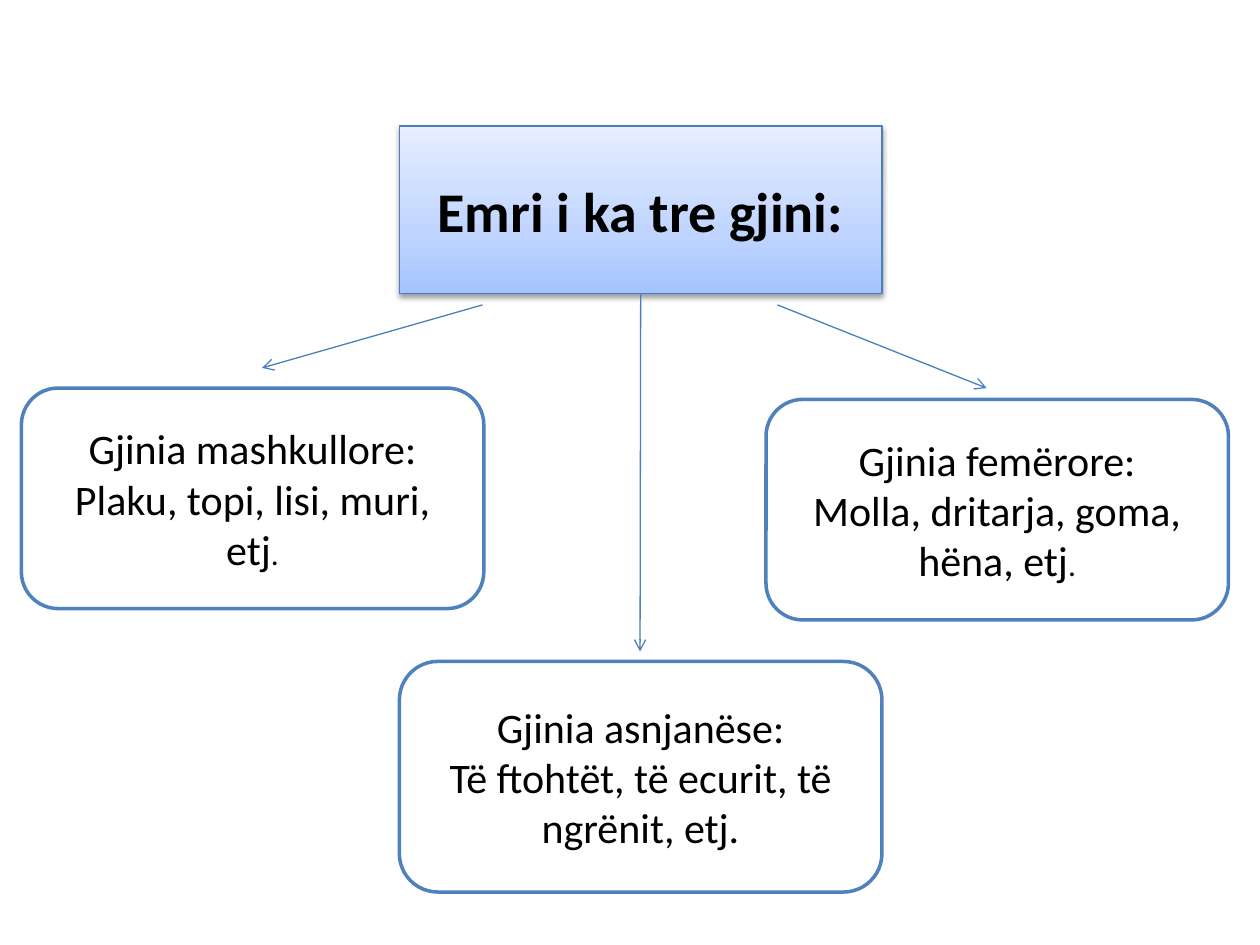
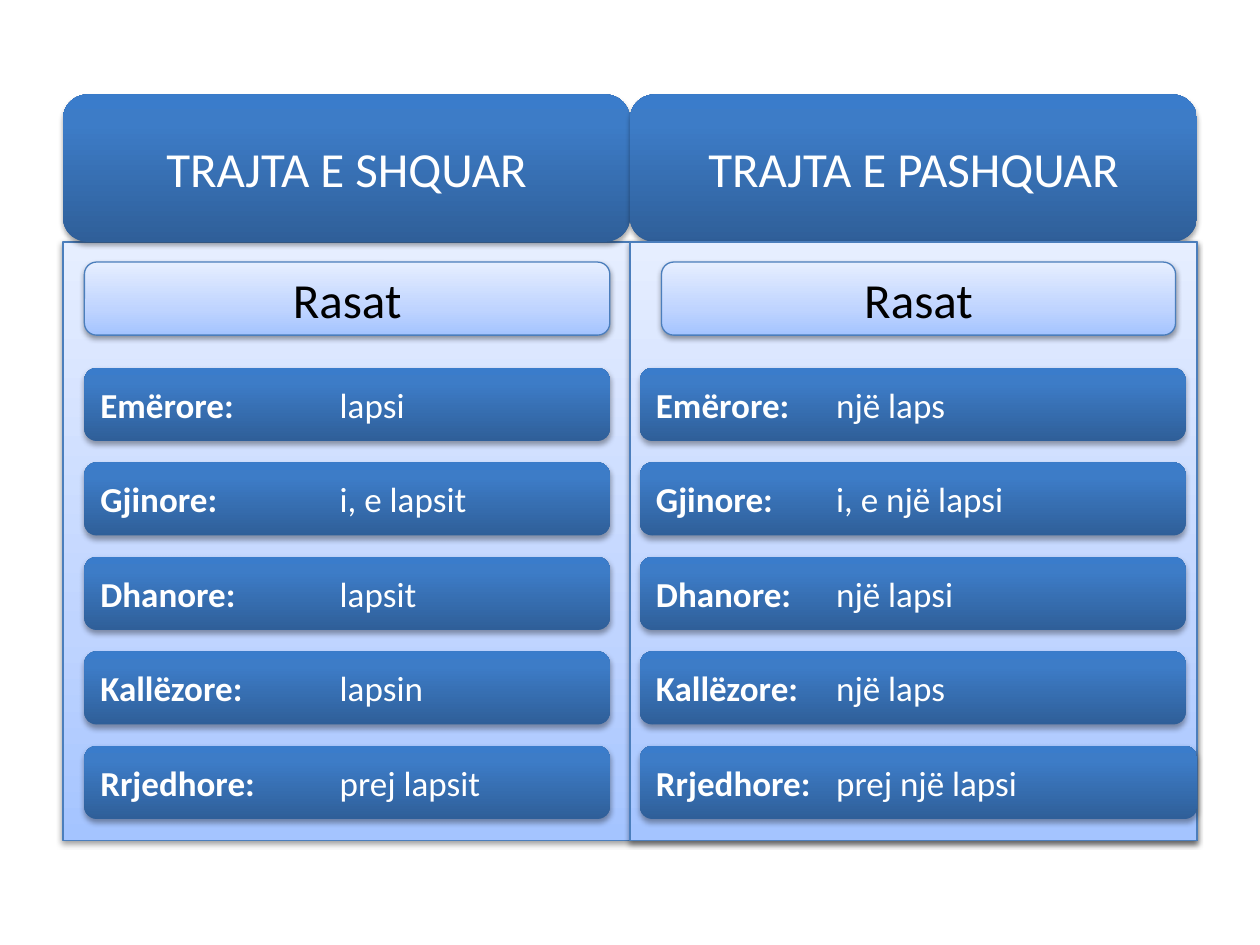
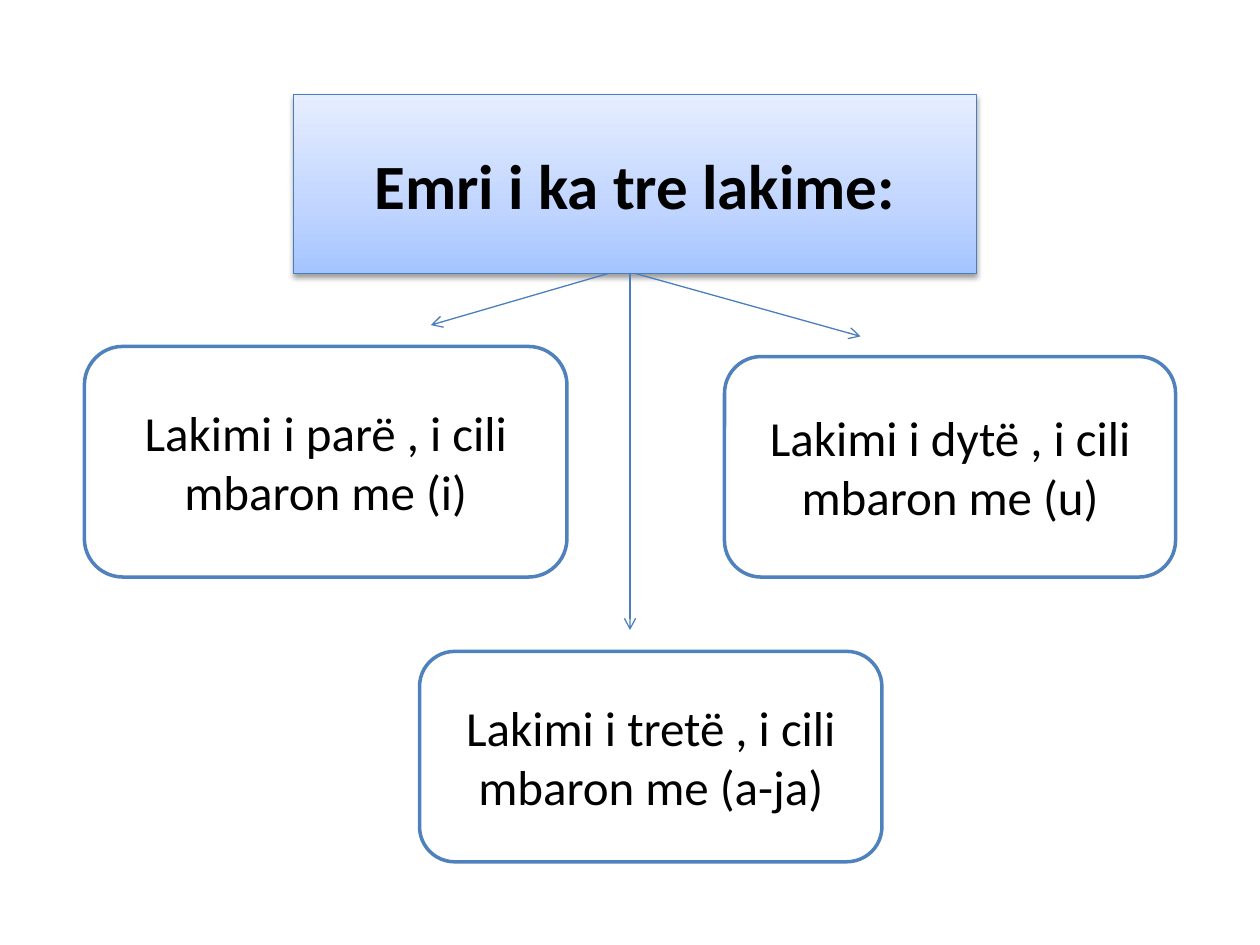
import pptx
import pptx.dml.color
import pptx.enum.shapes
import pptx.enum.text
import pptx.oxml.ns
import pptx.util
from lxml import etree

Inches = pptx.util.Inches
Pt = pptx.util.Pt
qn = pptx.oxml.ns.qn
SHAPES = pptx.enum.shapes.MSO_SHAPE
ALIGN = pptx.enum.text.PP_ALIGN

FONT = "Calibri"
BLACK = "000000"
WHITE = "FFFFFF"
EDGE = "4B7EBC"
TITLE_LAYOUT, BLANK_LAYOUT = 5, 6

PALE = {"stops": [(0, "A4C4FF"), (35, "BFD4FF"), (100, "E6EEFF")],
        "line": (EDGE, 0.75), "shadow": (38, 1.6)}
DEEP = {"stops": [(0, "2F5F99"), (80, "3D7CC7"), (100, "3A7CCB")],
        "shadow": (35, 1.8)}
OUTLINED = {"solid": WHITE, "line": ("4F81BD", 2)}

ROW_TOP, ROW_STEP, ROW_HEIGHT = 2.92, 0.75, 0.58
CASES = ["Emërore:", "Gjinore:", "Dhanore:", "Kallëzore:", "Rrjedhore:"]


def color(value):
    return pptx.dml.color.RGBColor.from_string(value)


def add_color_element(parent, value):
    return etree.SubElement(parent, qn("a:srgbClr"), val=value)


def fill_gradient(shape, stops):
    """Fill with (percent, colour) stops running from bottom to top."""
    shape.fill.gradient()
    shape.fill.gradient_angle = 90
    stop_list = shape._element.spPr.find(qn("a:gradFill")).find(qn("a:gsLst"))
    for old_stop in list(stop_list):
        stop_list.remove(old_stop)
    for percent, value in stops:
        stop = etree.SubElement(stop_list, qn("a:gs"), pos=str(percent * 1000))
        add_color_element(stop, value)


def add_shadow(shape, opacity, distance):
    effects = shape._element.spPr.find(qn("a:effectLst"))
    shadow = etree.SubElement(
        effects, qn("a:outerShdw"), blurRad=str(Pt(3.1)), dist=str(Pt(distance)),
        dir="5400000", rotWithShape="0")
    shade = add_color_element(shadow, BLACK)
    etree.SubElement(shade, qn("a:alpha"), val=str(opacity * 1000))


def apply_look(shape, look):
    if "stops" in look:
        fill_gradient(shape, look["stops"])
    else:
        shape.fill.solid()
        shape.fill.fore_color.rgb = color(look["solid"])
    if "line" in look:
        line_color, width = look["line"]
        shape.line.color.rgb = color(line_color)
        shape.line.width = Pt(width)
    else:
        shape.line.fill.background()
    shape.shadow.inherit = False
    if "shadow" in look:
        add_shadow(shape, *look["shadow"])


def write_text(shape, paragraphs, size, text_color=BLACK, bold=False,
               align=ALIGN.CENTER):
    """Write paragraphs, each a list of (text, format changes) runs."""
    frame = shape.text_frame
    frame.word_wrap = True
    frame.vertical_anchor = pptx.enum.text.MSO_ANCHOR.MIDDLE
    for index, runs in enumerate(paragraphs):
        paragraph = frame.add_paragraph() if index else frame.paragraphs[0]
        paragraph.alignment = align
        for text, changes in runs:
            run = paragraph.add_run()
            run.text = text
            settings = {"name": FONT, "size": Pt(size), "bold": bold, **changes}
            for name, value in settings.items():
                setattr(run.font, name, value)
            run.font.color.rgb = color(text_color)


def add_box(slide, kind, bounds, look):
    shape = slide.shapes.add_shape(kind, *map(Inches, bounds))
    apply_look(shape, look)
    return shape


def add_title(slide, text, bounds, size):
    title = slide.shapes.title
    for name, value in zip(("left", "top", "width", "height"), bounds):
        setattr(title, name, Inches(value))
    apply_look(title, PALE)
    write_text(title, [[(text, {})]], size, bold=True)
    return title


def add_arrow(slide, start, end, source=None):
    """Draw an arrow, joined to the bottom of source when one is given."""
    arrow = slide.shapes.add_connector(
        pptx.enum.shapes.MSO_CONNECTOR.STRAIGHT, *map(Inches, start + end))
    if source is not None:
        arrow.begin_connect(source, 2)
    arrow.line.color.rgb = color(EDGE)
    arrow.line.width = Pt(0.75)
    etree.SubElement(arrow.line._get_or_add_ln(), qn("a:tailEnd"), type="arrow")
    etree.SubElement(arrow._element.spPr, qn("a:effectLst"))


def add_branch_slide(presentation, title, branches, size, arrows):
    """Build a title box with arrows to outlined boxes below it."""
    slide = presentation.slides.add_slide(presentation.slide_layouts[TITLE_LAYOUT])
    title_box = add_title(slide, *title)
    for bounds, paragraphs in branches:
        box = add_box(slide, SHAPES.ROUNDED_RECTANGLE, bounds, OUTLINED)
        write_text(box, paragraphs, size)
    for start, end, joined in arrows:
        add_arrow(slide, start, end, title_box if joined else None)


def add_case_row(slide, bounds, case, form, tab):
    row = add_box(slide, SHAPES.ROUNDED_RECTANGLE, bounds, DEEP)
    write_text(row, [[(case + "\t", {"bold": True}), (form, {})]], 20, WHITE,
               align=ALIGN.LEFT)
    properties = row.text_frame.paragraphs[0]._p.get_or_add_pPr()
    tabs = etree.SubElement(properties, qn("a:tabLst"))
    etree.SubElement(tabs, qn("a:tab"), pos=str(Inches(tab)), algn="l")


def add_case_column(slide, label_bounds, left, widths, forms, tab):
    label = add_box(slide, SHAPES.ROUNDED_RECTANGLE, label_bounds, PALE)
    write_text(label, [[("Rasat", {})]], 28)
    for index, (case, form, width) in enumerate(zip(CASES, forms, widths)):
        bounds = (left, ROW_TOP + index * ROW_STEP, width, ROW_HEIGHT)
        add_case_row(slide, bounds, case, form, tab)


def add_declension_slide(presentation):
    slide = presentation.slides.add_slide(presentation.slide_layouts[BLANK_LAYOUT])
    add_box(slide, SHAPES.RECTANGLE, (0.5, 1.92, 9, 4.75), PALE)
    for left, heading in ((0.5, "TRAJTA E SHQUAR"), (5, "TRAJTA E PASHQUAR")):
        header = add_box(slide, SHAPES.ROUNDED_RECTANGLE,
                         (left, 0.75, 4.5, 1.17), DEEP)
        write_text(header, [[(heading, {})]], 28, WHITE)
    add_box(slide, SHAPES.FLOWCHART_PROCESS, (5, 1.92, 4.5, 4.75), PALE)
    add_case_column(slide, (0.67, 2.08, 4.17, ROW_HEIGHT), 0.67, [4.17] * 5,
                    ["lapsi", "i, e lapsit", "lapsit", "lapsin", "prej lapsit"], 1.9)
    add_case_column(slide, (5.25, 2.08, 4.08, ROW_HEIGHT), 5.08,
                    [4.33] * 4 + [4.42],
                    ["një laps", "i, e një lapsi", "një lapsi", "një laps",
                     "prej një lapsi"], 1.43)


def main():
    presentation = pptx.Presentation()
    presentation.slide_width = Inches(10)
    presentation.slide_height = Inches(7.5)

    small_stop = (".", {"size": Pt(18)})
    add_branch_slide(
        presentation,
        ("Emri i ka tre gjini:", (3.17, 1, 3.83, 1.33), 32),
        [((0.17, 3.08, 3.67, 1.75),
          [[("Gjinia mashkullore:", {})],
           [("Plaku, topi, lisi, muri, etj", {}), small_stop]]),
         ((6.08, 3.17, 3.67, 1.75),
          [[("Gjinia femërore:", {})],
           [("Molla, dritarja, goma,", {})],
           [("hëna, etj", {}), small_stop]]),
         ((3.17, 5.25, 3.83, 1.83),
          [[("Gjinia asnjanëse:", {})],
           [("Të ftohtët, të ecurit, të ngrënit, etj.", {})]])],
        24,
        [((5.08, 2.33), (5.08, 5.17), True),
         ((6.17, 2.42), (7.83, 3.08), False),
         ((3.83, 2.42), (2.08, 2.92), False)])

    add_declension_slide(presentation)

    add_branch_slide(
        presentation,
        ("Emri i ka tre lakime:", (2.33, 0.75, 5.42, 1.42), 36),
        [((0.67, 2.75, 3.83, 1.83), [[("Lakimi i parë , i cili mbaron me (i)", {})]]),
         ((5.75, 2.83, 3.58, 1.75), [[("Lakimi i dytë , i cili mbaron me (u)", {})]]),
         ((3.33, 5.17, 3.67, 1.67),
          [[("Lakimi i tretë , i cili mbaron me (a-ja)", {})]])],
        28,
        [((5.04, 2.17), (6.83, 2.67), True),
         ((4.83, 2.17), (3.42, 2.58), False),
         ((5, 2.17), (5, 5), False)])

    presentation.save("out.pptx")


if __name__ == "__main__":
    main()
